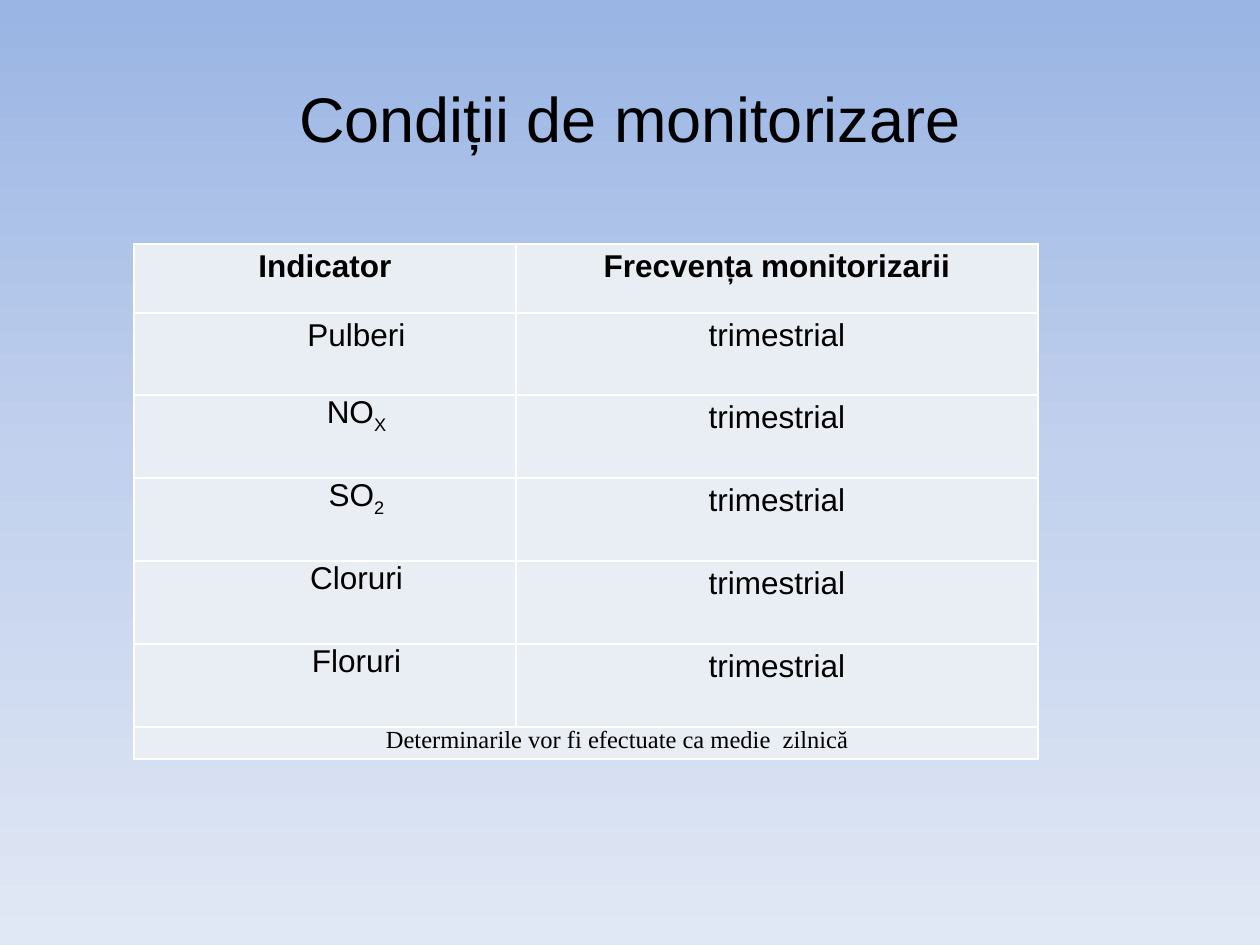
from copy import deepcopy

from lxml.etree import SubElement
from pptx import Presentation
from pptx.dml.color import RGBColor
from pptx.enum.text import MSO_ANCHOR, PP_ALIGN
from pptx.oxml.ns import qn
from pptx.util import Emu, Pt

BLACK, WHITE, CELL_FILL = "000000", "FFFFFF", "E9EDF4"
BACKGROUND_STOPS = [(0, "9AB5E4"), (0.5, "C2D1ED"), (1, "E1E8F5")]
HEADERS = ["Indicator", "Frecvența monitorizarii"]
INDICATORS = [("Pulberi", ""), ("NO", "X"), ("SO", "2"), ("Cloruri", ""), ("Floruri", "")]
FREQUENCY = "trimestrial"
FOOTNOTE = "Determinarile vor fi efectuate ca medie  zilnică"
COLUMN_WIDTHS = [382, 522]
ROW_HEIGHTS = [69, 82, 83, 83, 83, 83, 32]
INDENT = 63


def px(length):
    """Turn pixels into EMU."""
    return Emu(round(length * 914400 / 126))


def color(value):
    """Turn a hex string into a colour."""
    return RGBColor.from_string(value)


def paint_background(slide):
    """Fill the slide with a vertical gradient."""
    fill = slide.background.fill
    fill.gradient()
    stop_list = next(slide.element.iter(qn("a:gsLst")))
    stop_list.append(deepcopy(stop_list[0]))
    for stop, (position, value) in zip(fill.gradient_stops, BACKGROUND_STOPS):
        stop.position = position
        stop.color.rgb = color(value)
    fill.gradient_angle = 270


def format_paragraph(paragraph, size, font_name="Arial", bold=False):
    """Centre a paragraph and format its runs."""
    paragraph.alignment = PP_ALIGN.CENTER
    for run in paragraph.runs:
        run.font.name = font_name
        run.font.size = Pt(size)
        run.font.bold = bold
        run.font.color.rgb = color(BLACK)


def add_title(slide, text):
    """Add the centred slide title."""
    text_frame = slide.shapes.add_textbox(px(63), px(38), px(1134), px(158)).text_frame
    text_frame.word_wrap = True
    text_frame.vertical_anchor = MSO_ANCHOR.MIDDLE
    text_frame.text = text
    format_paragraph(text_frame.paragraphs[0], 36)


def style_cell(cell):
    """Set the margins, borders and fill of a cell."""
    cell.margin_left = cell.margin_right = px(9)
    cell.margin_top = cell.margin_bottom = 0
    properties = cell._tc.get_or_add_tcPr()
    for side in ("a:lnL", "a:lnR", "a:lnT", "a:lnB"):
        line = SubElement(properties, qn(side), w=str(Pt(1)))
        SubElement(SubElement(line, qn("a:solidFill")), qn("a:srgbClr"), val=WHITE)
    cell.fill.solid()
    cell.fill.fore_color.rgb = color(CELL_FILL)


def write_cell(cell, text, subscript="", spacing=None, indent=0, size=18, **style):
    """Write one line of text in a cell, with an optional subscript."""
    paragraph = cell.text_frame.paragraphs[0]
    paragraph.text = text
    if subscript:
        run = paragraph.add_run()
        run.text = subscript
        run.font._element.set("baseline", "-25000")
    paragraph.line_spacing = spacing
    if indent:
        paragraph._p.get_or_add_pPr().set("indent", str(px(indent)))
    format_paragraph(paragraph, size, **style)


def add_monitoring_table(slide):
    """Add the table of indicators and monitoring frequencies."""
    table = slide.shapes.add_table(
        len(ROW_HEIGHTS), len(COLUMN_WIDTHS), px(134), px(244),
        px(sum(COLUMN_WIDTHS)), px(sum(ROW_HEIGHTS))).table
    table.first_row = table.horz_banding = False
    for column, width in zip(table.columns, COLUMN_WIDTHS):
        column.width = px(width)
    for row, height in zip(table.rows, ROW_HEIGHTS):
        row.height = px(height)
    for cell in table.iter_cells():
        style_cell(cell)
    for column, header in enumerate(HEADERS):
        write_cell(table.cell(0, column), header, spacing=1.15, bold=True)
    for row, (name, subscript) in enumerate(INDICATORS, start=1):
        spacing = 1.15 if row == 1 else None
        write_cell(table.cell(row, 0), name, subscript, spacing, INDENT)
        write_cell(table.cell(row, 1), FREQUENCY, spacing=1.15)
    last_row = len(ROW_HEIGHTS) - 1
    footnote_cell = table.cell(last_row, 0)
    footnote_cell.merge(table.cell(last_row, 1))
    write_cell(footnote_cell, FOOTNOTE, indent=INDENT, size=14, font_name="Times New Roman")


def main():
    """Build and save the slide."""
    presentation = Presentation()
    presentation.slide_width, presentation.slide_height = px(1260), px(945)
    slide = presentation.slides.add_slide(presentation.slide_layouts[6])
    paint_background(slide)
    add_title(slide, "Condiții de monitorizare")
    add_monitoring_table(slide)
    presentation.save("out.pptx")


if __name__ == "__main__":
    main()
